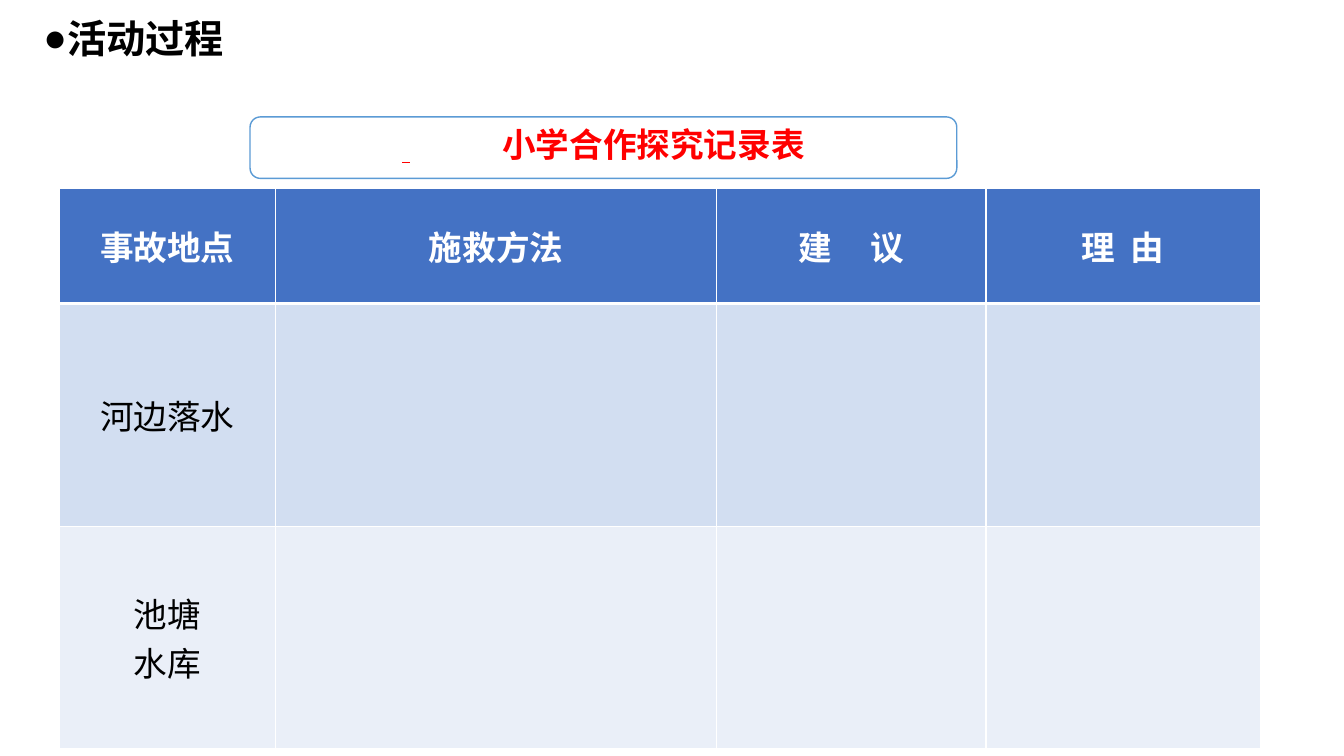
from dataclasses import dataclass
from lxml.etree import SubElement
from pptx import Presentation
from pptx.dml.color import RGBColor
from pptx.enum.shapes import MSO_SHAPE
from pptx.enum.text import MSO_ANCHOR, PP_ALIGN
from pptx.oxml.ns import qn
from pptx.util import Inches, Pt


@dataclass(frozen=True)
class Theme:
    black: str = "000000"
    white: str = "FFFFFF"
    red: str = "FF0000"
    header: str = "4472C4"
    bands: tuple = ("D2DEF1", "EAEFF8")
    outline: str = "5B9BD5"
    title_size: int = 28
    body_size: int = 24
    title_font: str = "Noto Sans CJK SC"
    body_font: str = "Arial"


theme = Theme()


def style_run(r, color, bold, size=theme.body_size, font=theme.body_font):
    r.font.size = Pt(size)
    r.font.name = font
    r.font.bold = bold
    r.font.color.rgb = RGBColor.from_string(color)
    if r.text == " ":
        return
    SubElement(r.font._element, qn("a:ea"), typeface=theme.title_font)


def add_border(cell, side, width):
    ln = SubElement(cell._tc.get_or_add_tcPr(), qn(f"a:{side}"), w=str(Pt(width)))
    fill = SubElement(ln, qn("a:solidFill"))
    SubElement(fill, qn("a:srgbClr"), val=theme.white)


prs = Presentation()
prs.slide_width, prs.slide_height = Inches(13.33), Inches(7.5)
s = prs.slides.add_slide(prs.slide_layouts[6])

title = s.shapes.add_textbox(Inches(0.19), Inches(0.05), Inches(2.27), Inches(0.61))
tf = title.text_frame
tf.word_wrap = True
tf.vertical_anchor = MSO_ANCHOR.BOTTOM
p = tf.paragraphs[0]
p.text = "活动过程"
p.alignment = PP_ALIGN.CENTER
p.line_spacing = 0.9
pPr = p._p.get_or_add_pPr()
pPr.set("marL", "0")
pPr.set("indent", "0")
SubElement(pPr, qn("a:buFont"), typeface=theme.body_font)
SubElement(pPr, qn("a:buChar"), char="●")
style_run(p.runs[0], theme.black, True, theme.title_size, theme.title_font)

columns = [("事故地点", 2.14), ("施救方法", 4.38), ("建 议", 2.67), ("理 由", 2.72)]
places = ["河边落水", "池塘\n水库"]
gap_spacing = {"建 议": 22, "理 由": 5.5}
row_heights = [1.14, 2.21, 2.21]

frame = s.shapes.add_table(len(row_heights), len(columns), Inches(0.59), Inches(1.87),
                           Inches(11.91), Inches(5.56))
table = frame.table
for column, (_, width) in zip(table.columns, columns):
    column.width = Inches(width)
for row, height in zip(table.rows, row_heights):
    row.height = Inches(height)

for i, row in enumerate(table.rows):
    is_header = i == 0
    for j, cell in enumerate(row.cells):
        top, bottom = (3 if i == 1 else 1), (3 if is_header else 1)
        for side, width in (("lnL", 1), ("lnR", 1), ("lnT", top), ("lnB", bottom)):
            add_border(cell, side, width)
        cell.fill.solid()
        cell.fill.fore_color.rgb = RGBColor.from_string(
            theme.header if is_header else theme.bands[i - 1])
        cell.vertical_anchor = MSO_ANCHOR.MIDDLE
        if not is_header and j > 0:
            continue
        label = columns[j][0] if is_header else places[i - 1]
        for n, line in enumerate(label.split("\n")):
            p = cell.text_frame.paragraphs[0] if n == 0 else cell.text_frame.add_paragraph()
            p.alignment = PP_ALIGN.CENTER
            for part in line.partition(" "):
                if part:
                    r = p.add_run()
                    r.text = part
                    style_run(r, theme.white if is_header else theme.black, is_header)
                    if part == " ":
                        r.font._element.set("spc", str(int(gap_spacing[line] * 100)))

sp = s.shapes.add_shape(MSO_SHAPE.ROUNDED_RECTANGLE, Inches(2.48), Inches(1.16),
                        Inches(7.01), Inches(0.61))
sp.shadow.inherit = False
sp.fill.solid()
sp.fill.fore_color.rgb = RGBColor.from_string(theme.white)
sp.line.color.rgb = RGBColor.from_string(theme.outline)
sp.line.width = Pt(1)
tf = sp.text_frame
tf.word_wrap = True
tf.vertical_anchor = MSO_ANCHOR.MIDDLE
p = tf.paragraphs[0]
p.alignment = PP_ALIGN.CENTER
p.line_spacing = 0.8
for text, is_blank in ((" ", True), ("小学合作探究记录表", False)):
    r = p.add_run()
    r.text = text
    style_run(r, theme.red, True)
    r.font.underline = is_blank
    if is_blank:
        r.font._element.set("spc", "6600")

prs.save("out.pptx")
